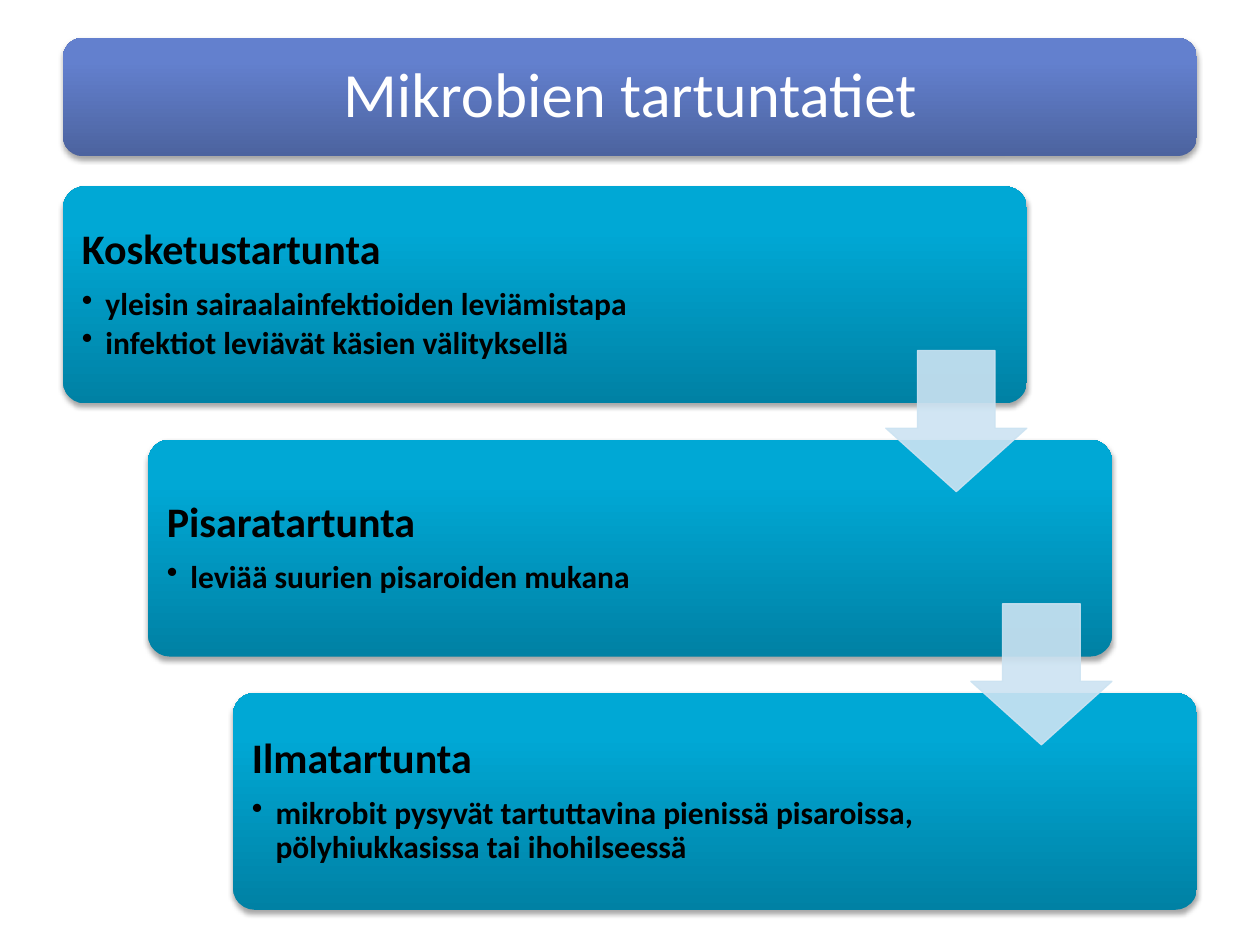
import pptx
import pptx.util
import pptx.dml.color
import pptx.enum.shapes
import pptx.enum.text
import pptx.oxml
import pptx.oxml.ns

Pt = pptx.util.Pt
SHAPE = pptx.enum.shapes.MSO_SHAPE
ALIGN = pptx.enum.text.PP_ALIGN
NS = pptx.oxml.ns.nsdecls("a")

# Gradient stops run from the bottom edge to the top edge
TITLE_STOPS = [(0, "4C639F"), (80, "6380CE"), (100, "6180D1")]
CARD_STOPS = [(0, "0081A4"), (80, "00A8D5"), (100, "00A8D6")]
ARROW_COLOR = "CCE3F2"
ARROW_ALPHA = 90

TITLE_FORMAT = {"size": Pt(36), "name": "Calibri", "bold": False}
HEADING_FORMAT = {"size": Pt(24), "name": "Calibri", "bold": True}
BULLET_FORMAT = {"size": Pt(18), "name": "Calibri", "bold": True}

TITLE = "Mikrobien tartuntatiet"
ROUTES = [
    ("Kosketustartunta", ["yleisin sairaalainfektioiden leviämistapa",
                          "infektiot leviävät käsien välityksellä"]),
    ("Pisaratartunta", ["leviää suurien pisaroiden mukana"]),
    ("Ilmatartunta", ["mikrobit pysyvät tartuttavina pienissä pisaroissa, "
                      "pölyhiukkasissa tai ihohilseessä"]),
]


def rgb(color):
    return pptx.dml.color.RGBColor.from_string(color)


def add_panel(slide, left, top, width, height, stops):
    """Rounded panel with a vertical gradient and a soft shadow."""
    sp = slide.shapes.add_shape(SHAPE.ROUNDED_RECTANGLE, Pt(left), Pt(top),
                                Pt(width), Pt(height))
    sp.line.fill.background()
    sp.fill.background()
    gs = "".join(f'<a:gs pos="{pos * 1000}"><a:srgbClr val="{color}"/></a:gs>'
                 for pos, color in stops)
    props = sp._element.spPr
    no_fill = props.find(pptx.oxml.ns.qn("a:noFill"))
    props.replace(no_fill, pptx.oxml.parse_xml(
        f'<a:gradFill {NS} rotWithShape="1"><a:gsLst>{gs}</a:gsLst>'
        '<a:lin ang="16200000" scaled="0"/></a:gradFill>'))
    props.append(pptx.oxml.parse_xml(
        f'<a:effectLst {NS}><a:outerShdw blurRad="{Pt(3.1)}" dist="{Pt(1.8)}" '
        'dir="5400000" rotWithShape="0"><a:srgbClr val="000000">'
        '<a:alpha val="35000"/></a:srgbClr></a:outerShdw></a:effectLst>'))
    return sp


def add_text_area(slide, left, top, width, height, inset):
    tf = slide.shapes.add_textbox(Pt(left), Pt(top), Pt(width),
                                  Pt(height)).text_frame
    tf.word_wrap = True
    tf.vertical_anchor = pptx.enum.text.MSO_ANCHOR.MIDDLE
    for side in ("left", "top", "right", "bottom"):
        setattr(tf, f"margin_{side}", Pt(inset))
    return tf


def write(p, text, fmt, color, space_after):
    p.line_spacing = 0.9
    p.space_after = Pt(space_after)
    r = p.add_run()
    r.text = text
    for name, value in fmt.items():
        setattr(r.font, name, value)
    r.font.color.rgb = rgb(color)


def make_bullet(p):
    p.level = 1
    props = p._p.get_or_add_pPr()
    props.set("marL", str(Pt(13.5)))
    props.set("indent", str(-Pt(13.5)))
    props.append(pptx.oxml.parse_xml(f'<a:buChar {NS} char="•"/>'))


def add_title(slide, left, top, width, height):
    add_panel(slide, left, top, width, height, TITLE_STOPS)
    tf = add_text_area(slide, left + 3.3, top + 3.3, width - 6.6,
                       height - 6.6, 10.8)
    p = tf.paragraphs[0]
    p.alignment = ALIGN.CENTER
    write(p, TITLE, TITLE_FORMAT, "FFFFFF", 12.6)


def add_card(slide, left, top, width, height, heading, bullets):
    sp = add_panel(slide, left, top, width, height, CARD_STOPS)
    sp.adjustments[0] = 0.1
    tf = add_text_area(slide, left + 3.7, top + 3.7, 415, height - 7.4, 7.2)
    write(tf.paragraphs[0], heading, HEADING_FORMAT, "000000", 8.4)
    for bullet in bullets:
        p = tf.add_paragraph()
        write(p, bullet, BULLET_FORMAT, "000000", 2.7)
        make_bullet(p)


def add_arrow(slide, left, top, size):
    sp = slide.shapes.add_shape(SHAPE.DOWN_ARROW, Pt(left), Pt(top),
                                Pt(size), Pt(size))
    sp.shadow.inherit = False
    sp.adjustments[0], sp.adjustments[1] = 0.55, 0.45
    sp.line.width = Pt(0.75)
    for fill in (sp.fill, sp.line.fill):
        fill.solid()
        fill.fore_color.rgb = rgb(ARROW_COLOR)
    for clr in sp._element.spPr.iter(pptx.oxml.ns.qn("a:srgbClr")):
        clr.append(pptx.oxml.parse_xml(
            f'<a:alpha {NS} val="{ARROW_ALPHA * 1000}"/>'))


def add_staircase(slide, left, top, width, height):
    """Cards stepping down to the right, with an arrow between neighbours."""
    card_w, card_h = 0.85 * width, 0.3 * height
    corners = [(left + i * 0.075 * width, top + i * 0.35 * height)
               for i in range(len(ROUTES))]
    for (x, y), (heading, bullets) in zip(corners, ROUTES):
        add_card(slide, x, y, card_w, card_h, heading, bullets)
    size = 0.65 * card_h
    for x, y in corners[:-1]:
        add_arrow(slide, x + card_w - size, y + 0.227 * height, size)


def main():
    prs = pptx.Presentation()
    prs.slide_width, prs.slide_height = Pt(720), Pt(540)
    slide = prs.slides.add_slide(prs.slide_layouts[6])
    add_title(slide, 36, 21.6, 648, 67.7)
    add_staircase(slide, 36, 106.5, 648, 413.4)
    prs.save("out.pptx")


if __name__ == "__main__":
    main()
